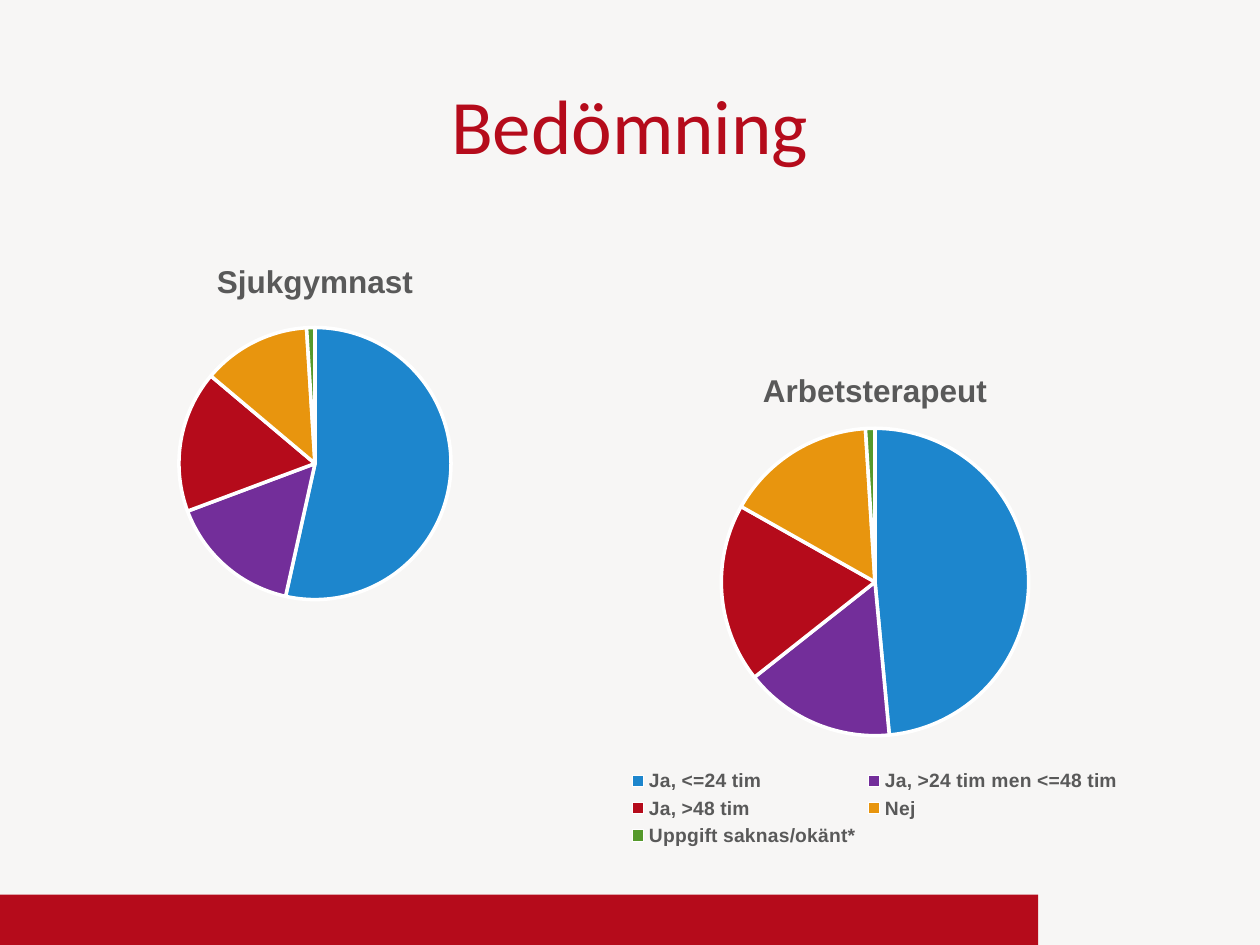
from dataclasses import dataclass

from lxml.etree import SubElement
from pptx import Presentation
from pptx.chart.data import CategoryChartData
from pptx.dml.color import RGBColor
from pptx.enum.chart import XL_CHART_TYPE, XL_LEGEND_POSITION
from pptx.enum.shapes import MSO_SHAPE
from pptx.enum.text import MSO_ANCHOR, PP_ALIGN
from pptx.oxml.ns import qn
from pptx.util import Inches, Pt

RED = "B50B1B"
GREY = "595959"
SLICES = ["1D86CD", "732E9A", RED, "E8950E", "55992B"]
ANSWERS = ["Ja, <=24 tim", "Ja, >24 tim men <=48 tim", "Ja, >48 tim",
           "Nej", "Uppgift saknas/okänt*"]


@dataclass
class Pie:
    title: str
    box: tuple[float, float, float, float]
    plot: tuple[float, float, float, float]  # shares of the box
    cats: list[str]
    vals: list[int]
    legend: bool = False


PIES = [
    Pie("Sjukgymnast", (0, 1.91, 5, 3), (0.28, 0.23, 0.44, 0.72),
        ["1", "2", "3", "4", "5"], [54, 16, 17, 13, 1]),
    Pie("Arbetsterapeut", (4.04, 2.76, 5.81, 4), (0.29, 0.16, 0.42, 0.61),
        ANSWERS, [49, 16, 19, 16, 1], legend=True),
]


def color(code: str) -> RGBColor:
    return RGBColor.from_string(code)


def style(font, name: str, size: int, code: str, bold: bool = False) -> None:
    font.name, font.size, font.bold = name, Pt(size), bold
    font.color.rgb = color(code)


def place(chart, plot: tuple[float, float, float, float]) -> None:
    """Fix the inner plot area to shares of the chart box."""
    area = chart._chartSpace.chart.plotArea
    for old in area.findall(qn("c:layout")):
        area.remove(old)
    layout = SubElement(area, qn("c:layout"))
    area.insert(0, layout)
    manual = SubElement(layout, qn("c:manualLayout"))
    pairs = [("layoutTarget", "inner"), ("xMode", "edge"), ("yMode", "edge")]
    for tag, val in pairs + list(zip("xywh", plot)):
        SubElement(manual, qn(f"c:{tag}")).set("val", str(val))


def draw_pie(slide, pie: Pie) -> None:
    data = CategoryChartData()
    data.categories = pie.cats
    data.add_series(pie.title, pie.vals)
    box = [Inches(n) for n in pie.box]
    chart = slide.shapes.add_chart(XL_CHART_TYPE.PIE, *box, data).chart
    style(chart.font, "Calibri", 10, "000000")

    chart.has_title = True
    chart.chart_title.include_in_layout = False
    head = chart.chart_title.text_frame
    head.text = pie.title
    style(head.paragraphs[0].font, "Arial", 18, GREY, True)

    chart.has_legend = pie.legend
    if pie.legend:
        chart.legend.position = XL_LEGEND_POSITION.BOTTOM
        chart.legend.include_in_layout = False
        style(chart.legend.font, "Arial", 11, GREY, True)

    plot = chart.plots[0]
    plot.vary_by_categories = True
    for i, code in enumerate(SLICES):
        part = plot.series[0].points[i].format
        part.fill.solid()
        part.fill.fore_color.rgb = color(code)
        part.line.color.rgb = color("FFFFFF")
        part.line.width = Pt(2)
    place(chart, pie.plot)


def draw_bar(slide) -> None:
    bar = slide.shapes.add_shape(MSO_SHAPE.RECTANGLE, 0, Inches(7.1),
                                 Inches(8.24), Inches(0.4))
    bar.shadow.inherit = False
    bar.fill.solid()
    bar.fill.fore_color.rgb = color(RED)
    bar.line.fill.background()


def draw_title(slide, text: str) -> None:
    title = slide.shapes.title
    title.left, title.top = Inches(0.75), Inches(0.18)
    title.width, title.height = Inches(8.5), Inches(1.61)
    frame = title.text_frame
    frame.text = text
    frame.vertical_anchor = MSO_ANCHOR.MIDDLE
    line = frame.paragraphs[0]
    line.alignment = PP_ALIGN.CENTER
    style(line.font, "Calibri", 44, RED)


def main() -> None:
    deck = Presentation()
    deck.slide_width, deck.slide_height = Inches(10), Inches(7.5)
    slide = deck.slides.add_slide(deck.slide_layouts[5])
    back = slide.background.fill
    back.solid()
    back.fore_color.rgb = color("F7F6F5")
    draw_bar(slide)
    draw_title(slide, "Bedömning")
    for pie in PIES:
        draw_pie(slide, pie)
    deck.save("out.pptx")


if __name__ == "__main__":
    main()
